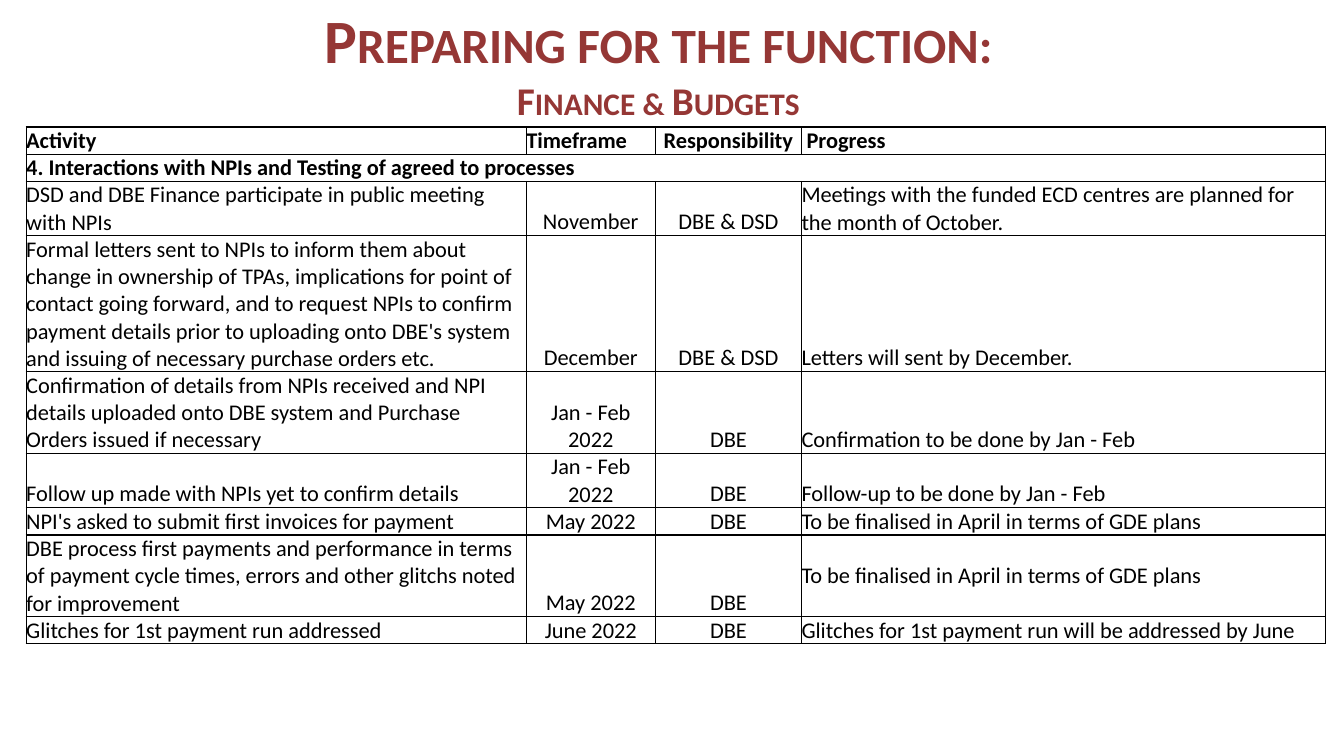
from dataclasses import dataclass
from typing import Any

from lxml import etree
from pptx import Presentation
from pptx import util as u
from pptx.dml.color import RGBColor
from pptx.enum import text
from pptx.oxml import ns

ACTIVITIES = [
    (1, "Activity", "Timeframe", "Responsibility", " Progress"),
    (1, "4. Interactions with NPIs and Testing of agreed to processes", "", "", ""),
    (2, "DSD and DBE Finance participate in public meeting with NPIs", "November", "DBE & DSD",
     "Meetings with the funded ECD centres are planned for the month of October."),
    (5, "Formal letters sent to NPIs to inform them about change in ownership of TPAs, "
     "implications for point of contact going forward, and to request NPIs to confirm payment "
     "details prior to uploading onto DBE's system and issuing of necessary purchase orders etc.",
     "December", "DBE & DSD", "Letters will sent by December."),
    (3, "Confirmation of details from NPIs received and NPI details uploaded onto DBE system "
     "and Purchase Orders issued if necessary", "Jan - Feb 2022", "DBE",
     "Confirmation to be done by Jan - Feb"),
    (2, "Follow up made with NPIs yet to confirm details", "Jan - Feb 2022", "DBE",
     "Follow-up to be done by Jan - Feb"),
    (1, "NPI's asked to submit first invoices for payment", "May 2022", "DBE",
     "To be finalised in April in terms of GDE plans"),
    (3, "DBE process first payments and performance in terms of payment cycle times, errors "
     "and other glitchs noted for improvement", "May 2022", "DBE",
     "To be finalised in April in terms of GDE plans"),
    (1, "Glitches for 1st payment run addressed", "June 2022", "DBE",
     "Glitches for 1st payment run will be addressed by June"),
]
COLUMN_WIDTHS = [4.96, 1.28, 1.45, 5.2]
LINE_HEIGHT = 0.27
HEADING_ROWS = 2
SECTION_ROW = 1
PAYMENT_ROW = 7
PROGRESS_COLUMN = 3


def color(value):
    """Turn a hex string into a colour."""
    return RGBColor.from_string(value)


@dataclass
class Painter:
    """Hold the style and the current slide."""

    page: Any
    font: str = "Calibri"
    accent: str = "953735"
    ink: str = "000000"
    paper: str = "FFFFFF"

    def style(self, para, size, bold, ink, align):
        """Set the font and alignment of a paragraph."""
        para.alignment = align
        font = para.font
        font.name, font.size, font.bold = self.font, u.Pt(size), bold
        font.color.rgb = color(ink)

    def title(self, left, top, width, height, lines):
        """Add centred small-caps title lines."""
        box = self.page.shapes.add_textbox(*map(u.Inches, (left, top, width, height)))
        frame = box.text_frame
        frame.word_wrap = True
        frame.vertical_anchor = text.MSO_ANCHOR.MIDDLE
        frame.text = "\n".join(wording for wording, size in lines)
        for para, (wording, size) in zip(frame.paragraphs, lines):
            self.style(para, size, True, self.accent, text.PP_ALIGN.CENTER)
            para._p.pPr.find(ns.qn("a:defRPr")).set("cap", "small")

    def border(self, cell):
        """Draw a thin line on each side of a cell."""
        properties = cell._tc.get_or_add_tcPr()
        for side in ("lnL", "lnR", "lnT", "lnB"):
            line = etree.SubElement(properties, ns.qn(f"a:{side}"), w=str(u.Pt(1)))
            fill = etree.SubElement(line, ns.qn("a:solidFill"))
            etree.SubElement(fill, ns.qn("a:srgbClr"), val=self.ink)

    def cell(self, cell, wording, bold, align, anchor):
        """Fill one table cell."""
        self.border(cell)
        cell.fill.solid()
        cell.fill.fore_color.rgb = color(self.paper)
        cell.margin_left = cell.margin_right = cell.margin_top = cell.margin_bottom = 0
        cell.vertical_anchor = anchor
        cell.text = wording
        self.style(cell.text_frame.paragraphs[0], 16, bold, self.ink, align)

    def table(self, left, top, activities):
        """Add the table of activities."""
        height = LINE_HEIGHT * sum(lines for lines, *wordings in activities)
        area = map(u.Inches, (left, top, sum(COLUMN_WIDTHS), height))
        table = self.page.shapes.add_table(len(activities), len(COLUMN_WIDTHS), *area).table
        table.first_row = table.horz_banding = False
        for column, width in zip(table.columns, COLUMN_WIDTHS):
            column.width = u.Inches(width)
        for row, (lines, *wordings) in enumerate(activities):
            table.rows[row].height = u.Inches(LINE_HEIGHT * lines)
            for column, wording in enumerate(wordings):
                centred = column == 2 or column == 1 and row > 0
                align = text.PP_ALIGN.CENTER if centred else text.PP_ALIGN.LEFT
                middle = (row, column) == (PAYMENT_ROW, PROGRESS_COLUMN)
                anchor = text.MSO_ANCHOR.MIDDLE if middle else text.MSO_ANCHOR.BOTTOM
                self.cell(table.cell(row, column), wording, row < HEADING_ROWS, align, anchor)
        table.cell(SECTION_ROW, 0).merge(table.cell(SECTION_ROW, PROGRESS_COLUMN))


def main():
    """Build and save the slide."""
    deck = Presentation()
    deck.slide_width, deck.slide_height = u.Inches(13.33), u.Inches(7.5)
    painter = Painter(deck.slides.add_slide(deck.slide_layouts[6]))
    painter.title(1.67, 0.13, 9.72, 0.98,
                  [("Preparing for the function:", 44), ("Finance & Budgets", 28)])
    painter.table(0.26, 1.26, ACTIVITIES)
    deck.save("out.pptx")


if __name__ == "__main__":
    main()
